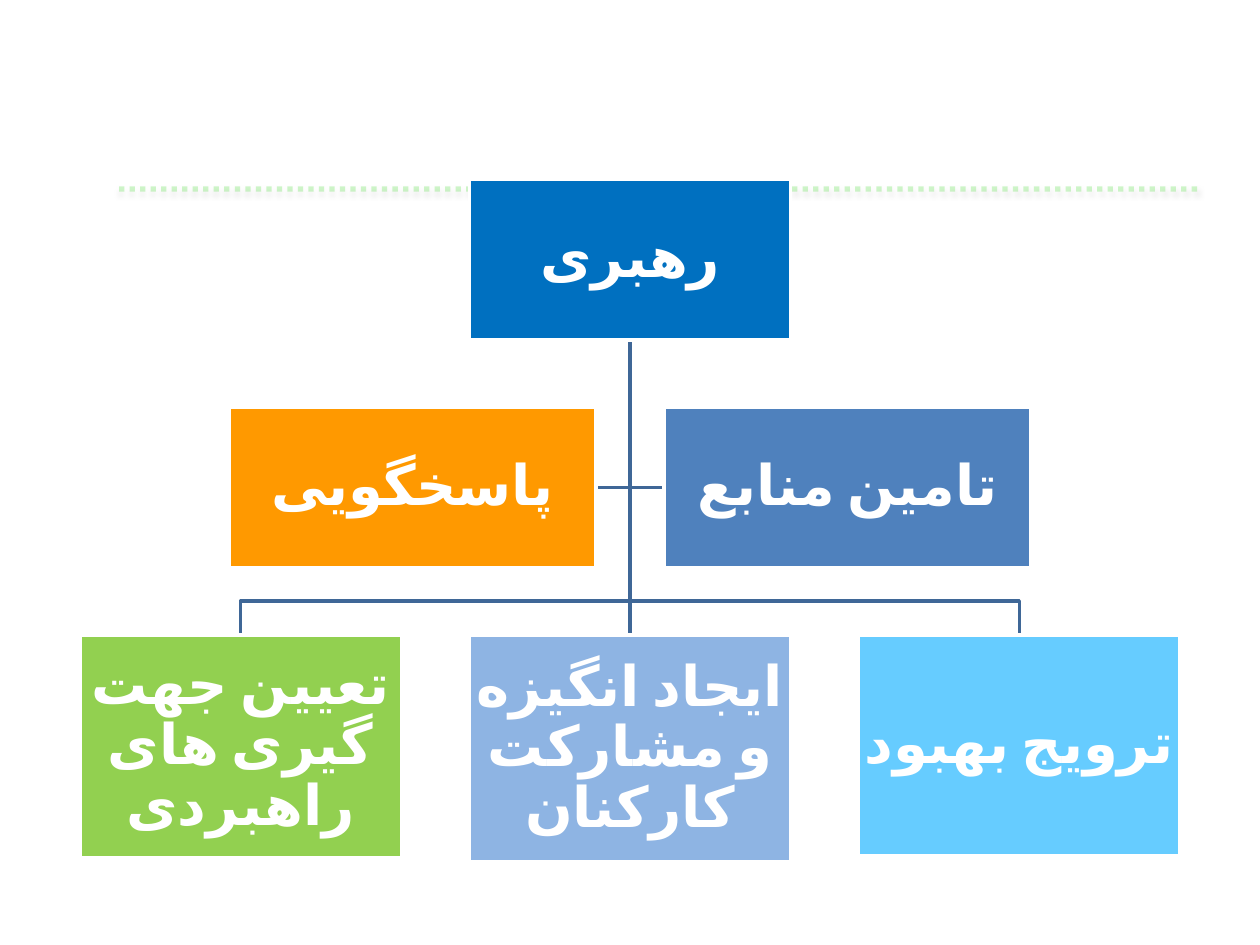
from dataclasses import dataclass

from lxml import etree
from pptx import Presentation
from pptx.dml.color import RGBColor
from pptx.enum.dml import MSO_LINE
from pptx.enum.shapes import MSO_CONNECTOR, MSO_SHAPE
from pptx.enum.text import MSO_ANCHOR, PP_ALIGN
from pptx.oxml import parse_xml
from pptx.oxml.ns import nsdecls, qn
from pptx.util import Inches, Pt

STRAIGHT = MSO_CONNECTOR.STRAIGHT
RECTANGLE = MSO_SHAPE.RECTANGLE
DOTTED = MSO_LINE.ROUND_DOT
MIDDLE = MSO_ANCHOR.MIDDLE
CENTER = PP_ALIGN.CENTER

SLIDE_WIDTH, SLIDE_HEIGHT = 10, 7.5
CENTER_X = SLIDE_WIDTH / 2
GAP = 0.54
FIRST_ROW_TOP, ROW_PITCH = 1.42, 1.81
BOX_HEIGHT = 1.28


@dataclass(frozen=True)
class Theme:
    font: str = "Calibri"
    text_size: int = 32
    line_width: int = 2
    rule_width: int = 3
    text: str = "FFFFFF"
    border: str = "FFFFFF"
    branch: str = "3F6797"
    rule: str = "26D80E"


@dataclass(frozen=True)
class Box:
    text: str
    fill: str
    height: float = BOX_HEIGHT


@dataclass(frozen=True)
class Row:
    box_width: float
    boxes: tuple[Box, ...]

    def center_of(self, column: int) -> float:
        """Centre of a box when the row is spread evenly about the slide's middle."""
        return CENTER_X + (column - (len(self.boxes) - 1) / 2) * (self.box_width + GAP)


THEME = Theme()
ROWS = (
    Row(2.55, (Box("رهبری", "0070C0"),)),
    Row(2.91, (Box("پاسخگویی", "FF9900"), Box("تامين منابع", "4F81BD"))),
    Row(2.55, (
        Box("تعیین جهت گیری های راهبردی", "92D050", 1.77),
        Box("ايجاد انگيزه و مشاركت كاركنان", "8EB4E3", 1.8),
        Box("ترویج بهبود", "66CCFF", 1.75),
    )),
)


def color(value: str) -> RGBColor:
    return RGBColor.from_string(value)


def row_top(row: int) -> float:
    return FIRST_ROW_TOP + row * ROW_PITCH


def draw_header_rule(slide) -> None:
    rule = slide.shapes.add_connector(STRAIGHT, *map(Inches, (9.5, 1.5, 0.92, 1.5)))
    rule.line.color.rgb = color(THEME.rule)
    rule.line.width = Pt(THEME.rule_width)
    rule.line.dash_style = DOTTED
    line_color = rule._element.spPr.find(".//" + qn("a:srgbClr"))
    etree.SubElement(line_color, qn("a:alpha"), val="22000")
    rule._element.spPr.append(parse_xml(
        f'<a:effectLst {nsdecls("a")}>'
        f'<a:outerShdw blurRad="{Pt(3.1)}" dist="{Pt(1.8)}" dir="5400000" rotWithShape="0">'
        '<a:srgbClr val="000000"><a:alpha val="35000"/></a:srgbClr>'
        "</a:outerShdw></a:effectLst>"))


def draw_branch(slide, points: list[tuple[float, float]]) -> None:
    builder = slide.shapes.build_freeform(*map(Inches, points[0]))
    builder.add_line_segments([(Inches(x), Inches(y)) for x, y in points[1:]], close=False)
    branch = builder.convert_to_shape()
    branch.shadow.inherit = False
    branch.fill.background()
    branch.line.color.rgb = color(THEME.branch)
    branch.line.width = Pt(THEME.line_width)


def draw_branches(slide) -> None:
    start = (CENTER_X, row_top(0) + BOX_HEIGHT)
    assistant_y = row_top(1) + BOX_HEIGHT / 2
    bottom = row_top(2)
    fork_y = bottom - GAP / 2
    for side in (1, -1):
        draw_branch(slide, [start, (CENTER_X, assistant_y),
                            (CENTER_X + side * GAP / 2, assistant_y)])
    for column in (2, 0):
        x = ROWS[2].center_of(column)
        draw_branch(slide, [start, (CENTER_X, fork_y), (x, fork_y), (x, bottom)])
    draw_branch(slide, [start, (CENTER_X, bottom)])


def draw_box(slide, box: Box, left: float, top: float, width: float) -> None:
    shape = slide.shapes.add_shape(
        RECTANGLE, *map(Inches, (left, top, width, box.height)))
    shape.shadow.inherit = False
    shape.fill.solid()
    shape.fill.fore_color.rgb = color(box.fill)
    shape.line.color.rgb = color(THEME.border)
    shape.line.width = Pt(THEME.line_width)

    frame = shape.text_frame
    frame.word_wrap = True
    frame.vertical_anchor = MIDDLE
    frame.margin_left = frame.margin_right = Inches(0.02)
    frame.margin_top = frame.margin_bottom = Inches(0.02)
    paragraph = frame.paragraphs[0]
    paragraph.alignment = CENTER
    paragraph.line_spacing = 0.9
    paragraph._p.get_or_add_pPr().set("rtl", "1")
    run = paragraph.add_run()
    run.text = box.text
    run.font.name = THEME.font
    run.font.size = Pt(THEME.text_size)
    run.font.bold = True
    run.font.color.rgb = color(THEME.text)
    # Arabic script takes its typeface from the complex-script slot.
    run_properties = run._r.get_or_add_rPr()
    run_properties.set("lang", "fa-IR")
    etree.SubElement(run_properties, qn("a:cs"), typeface=THEME.font)


def main() -> None:
    presentation = Presentation()
    presentation.slide_width = Inches(SLIDE_WIDTH)
    presentation.slide_height = Inches(SLIDE_HEIGHT)
    slide = presentation.slides.add_slide(presentation.slide_layouts[6])
    draw_header_rule(slide)
    draw_branches(slide)
    for index, row in enumerate(ROWS):
        for column, box in enumerate(row.boxes):
            left = row.center_of(column) - row.box_width / 2
            draw_box(slide, box, left, row_top(index), row.box_width)
    presentation.save("out.pptx")


if __name__ == "__main__":
    main()
